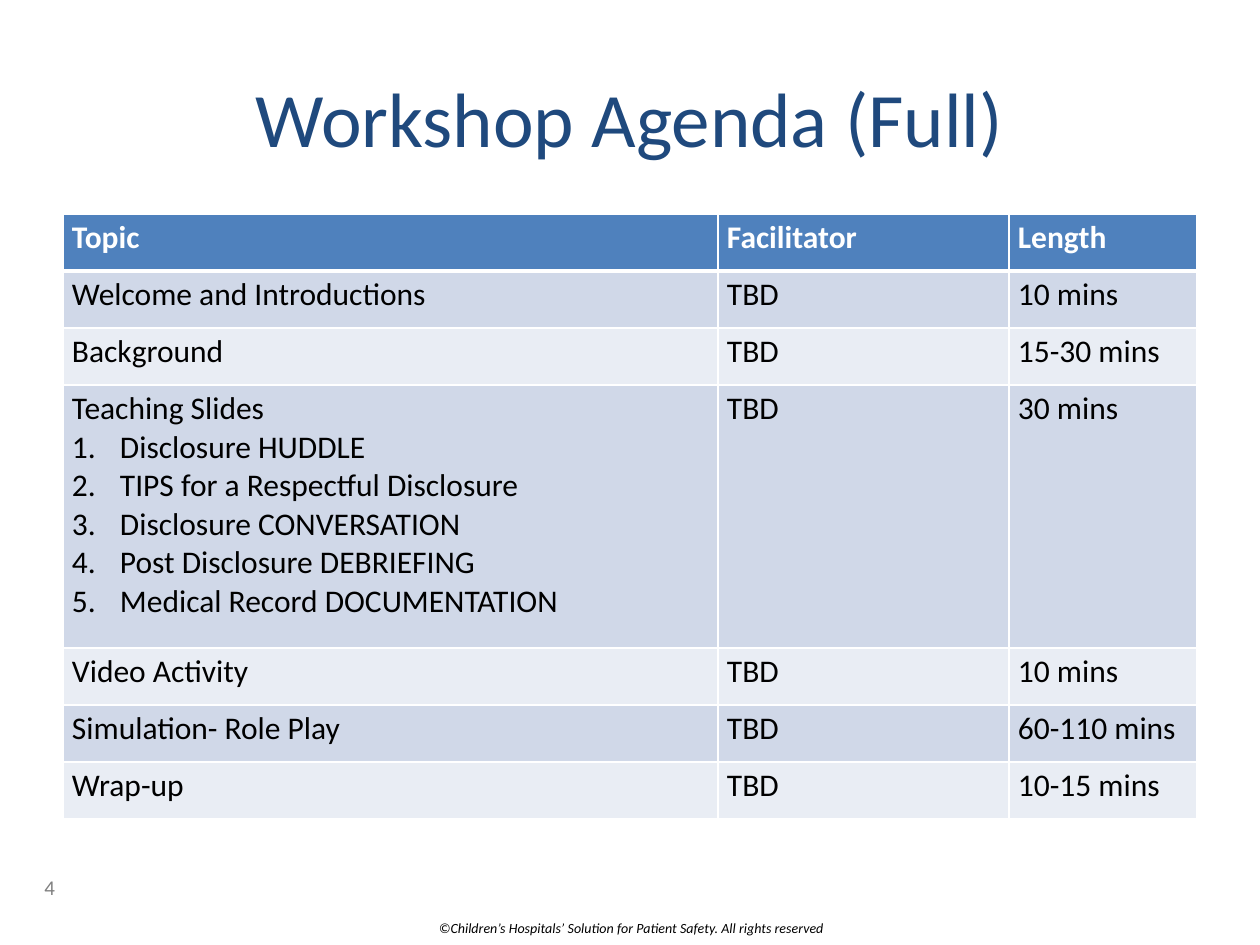
"""Build the workshop agenda slide."""
from typing import NamedTuple

from lxml.etree import SubElement
from pptx import Presentation
from pptx.dml.color import RGBColor
from pptx.enum.text import MSO_ANCHOR, PP_ALIGN
from pptx.oxml import parse_xml
from pptx.oxml.ns import nsdecls, qn
from pptx.util import Emu, Pt

HUES = {
    "white": "FFFFFF", "black": "000000", "gray": "808080", "navy": "1F497D",
    "blue": "4F81BD", "dark": "D0D8E8", "light": "E9EDF4",
}


class Label(NamedTuple):
    text: str
    box: tuple[int, int, int, int]
    size: int
    hue: str
    align: PP_ALIGN = PP_ALIGN.LEFT
    anchor: MSO_ANCHOR = MSO_ANCHOR.TOP
    slant: bool = False


class Item(NamedTuple):
    topic: str
    lead: str
    time: str
    steps: tuple[str, ...] = ()
    high: int = 57


LABELS = [
    Label("4", (32, 868, 293, 50), 12, "gray"),
    Label("©Children’s Hospitals’ Solution for Patient Safety. All rights reserved",
          (423, 913, 414, 30), 8, "black", PP_ALIGN.RIGHT, slant=True),
    Label("Workshop Agenda (Full)", (63, 38, 1134, 158), 44, "navy",
          PP_ALIGN.CENTER, MSO_ANCHOR.MIDDLE),
]
ITEMS = [
    Item("Topic", "Facilitator", "Length"),
    Item("Welcome and Introductions", "TBD", "10 mins"),
    Item("Background", "TBD", "15-30 mins"),
    Item("Teaching Slides", "TBD", "30 mins", (
        "Disclosure HUDDLE", "TIPS for a Respectful Disclosure",
        "Disclosure CONVERSATION", "Post Disclosure DEBRIEFING",
        "Medical Record DOCUMENTATION"), 263),
    Item("Video Activity", "TBD", "10 mins"),
    Item("Simulation- Role Play", "TBD", "60-110 mins"),
    Item("Wrap-up", "TBD", "10-15 mins"),
]
WIDTHS = (655, 291, 188)


def px(count: int) -> Emu:
    return Emu(round(count * 914400 / 126))


def tint(name: str) -> RGBColor:
    return RGBColor.from_string(HUES[name])


def style(para, size: int, hue: str, bold: bool = False, slant: bool = False) -> None:
    font = para.font
    font.name, font.size = "Calibri", Pt(size)
    font.bold, font.italic = bold, slant
    font.color.rgb = tint(hue)


def write(slide, label: Label) -> None:
    frame = slide.shapes.add_textbox(*map(px, label.box)).text_frame
    frame.word_wrap = True
    frame.vertical_anchor = label.anchor
    para = frame.paragraphs[0]
    para.text, para.alignment = label.text, label.align
    style(para, label.size, label.hue, slant=label.slant)


def number(para) -> None:
    props = para._p.get_or_add_pPr()
    props.set("marL", str(px(48)))
    props.set("indent", str(-px(48)))
    SubElement(props, qn("a:buFont"), typeface="+mj-lt")
    SubElement(props, qn("a:buAutoNum"), type="arabicPeriod")


def edge(cell, row: int) -> None:
    wide = {"lnT": 3 if row == 1 else 1, "lnB": 3 if row == 0 else 1}
    props = cell._tc.get_or_add_tcPr()
    for spot, side in enumerate(("lnL", "lnR", "lnT", "lnB")):
        props.insert(spot, parse_xml(
            f'<a:{side} {nsdecls("a")} w="{Pt(wide.get(side, 1))}"><a:solidFill>'
            f'<a:srgbClr val="{HUES["white"]}"/></a:solidFill></a:{side}>'))


def fill(cell, row: int, text: str, steps: tuple[str, ...]) -> None:
    cell.margin_left = cell.margin_right = px(9)
    cell.margin_top = cell.margin_bottom = px(5)
    cell.fill.solid()
    shade = "blue" if row == 0 else "dark" if row % 2 else "light"
    cell.fill.fore_color.rgb = tint(shade)
    edge(cell, row)
    frame = cell.text_frame
    frame.text = text
    for step in steps:
        para = frame.add_paragraph()
        para.text = step
        number(para)
    for para in frame.paragraphs:
        style(para, 18, "black" if row else "white", bold=row == 0)


def agenda(slide) -> None:
    high = sum(item.high for item in ITEMS)
    grid = slide.shapes.add_table(
        len(ITEMS), len(WIDTHS), px(63), px(214), px(sum(WIDTHS)), px(high)).table
    for col, wide in zip(grid.columns, WIDTHS):
        col.width = px(wide)
    for row, item in enumerate(ITEMS):
        grid.rows[row].height = px(item.high)
        for col, text in enumerate((item.topic, item.lead, item.time)):
            fill(grid.cell(row, col), row, text, () if col else item.steps)


def main() -> None:
    deck = Presentation()
    deck.slide_width, deck.slide_height = px(1260), px(945)
    slide = deck.slides.add_slide(deck.slide_layouts[6])
    for label in LABELS:
        write(slide, label)
    agenda(slide)
    deck.save("out.pptx")


if __name__ == "__main__":
    main()
